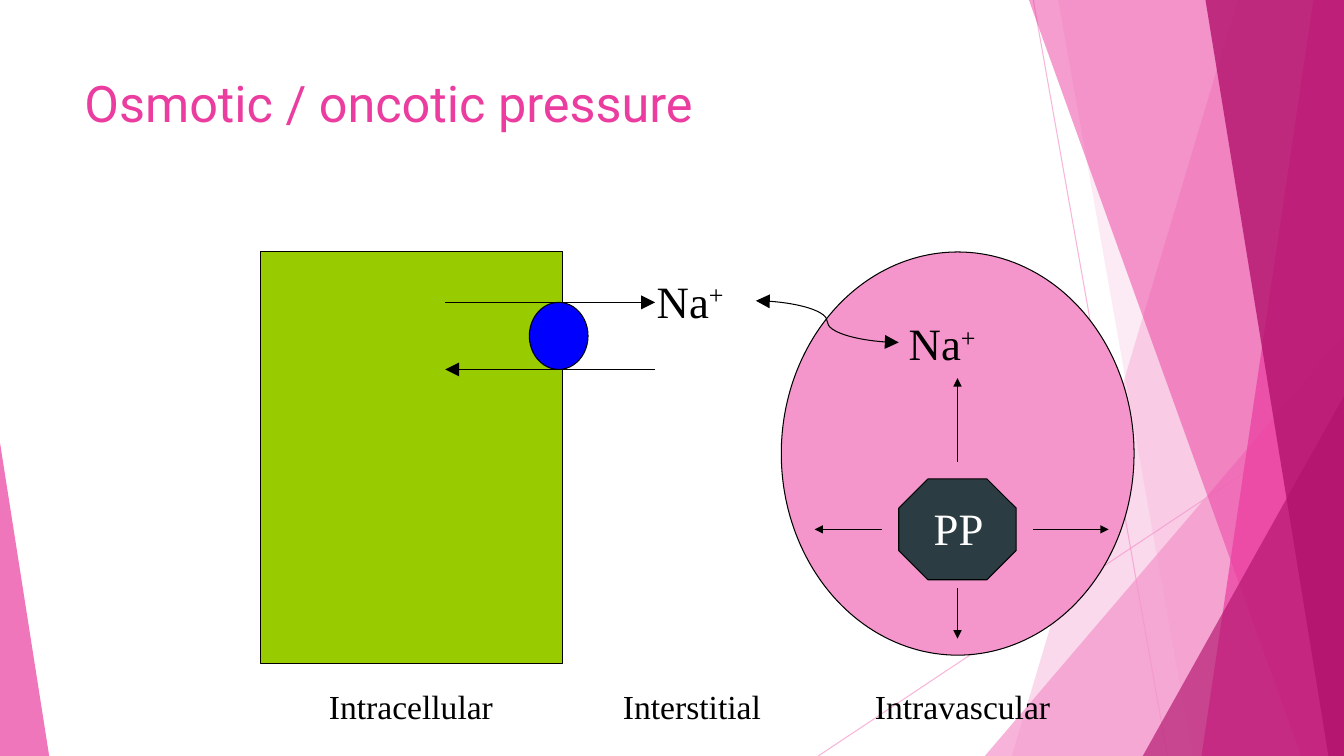
from dataclasses import dataclass

from lxml.etree import SubElement
from pptx import Presentation
from pptx.dml.color import RGBColor
from pptx.enum.shapes import MSO_CONNECTOR, MSO_SHAPE
from pptx.oxml.ns import qn
from pptx.util import Cm, Pt

WIDTH, HEIGHT = 33.87, 19.05


@dataclass(frozen=True)
class Theme:
    pale_pink: str = "F496CB"
    pink: str = "EB3D9F"
    magenta: str = "B2136D"
    black: str = "000000"
    white: str = "FFFFFF"
    cell_green: str = "99CC00"
    pump_blue: str = "0000FF"
    protein_slate: str = "2C3C43"
    title_font: str = "Roboto"
    body_font: str = "Times New Roman"
    title_size: int = 36
    symbol_size: int = 32
    label_size: int = 24
    line_width: float = 0.75


class SlideBuilder:
    def __init__(self, slide, theme):
        self.slide = slide
        self.theme = theme

    def paint(self, fill_format, color, opacity=100):
        fill_format.solid()
        fill_format.fore_color.rgb = RGBColor.from_string(color)
        if opacity < 100:
            color_element = fill_format._xPr.find(qn("a:solidFill"))[0]
            SubElement(color_element, qn("a:alpha"), val=str(opacity * 1000))

    def finish(self, shape, color, opacity, outlined):
        shape.shadow.inherit = False
        self.paint(shape.fill, color, opacity)
        if outlined:
            self.paint(shape.line.fill, self.theme.black)
            shape.line.width = Pt(self.theme.line_width)
        else:
            shape.line.fill.background()

    def shape(self, kind, box, color, opacity=100, outlined=True, adjustment=None):
        shape = self.slide.shapes.add_shape(kind, *map(Cm, box))
        if adjustment is not None:
            shape.adjustments[0] = adjustment
        self.finish(shape, color, opacity, outlined)

    def band(self, top_x, bottom_x, color, opacity):
        """Fill the slide from a slanted left edge to the right border."""
        corners = [(WIDTH, 0), (WIDTH, HEIGHT), (bottom_x, HEIGHT)]
        builder = self.slide.shapes.build_freeform(Cm(top_x), Cm(0), scale=1.0)
        builder.add_line_segments([(Cm(x), Cm(y)) for x, y in corners], close=True)
        self.finish(builder.convert_to_shape(), color, opacity, False)

    def corner(self, left, top, width, apex, color, opacity):
        """Stand a right triangle on the bottom edge; apex 0 is left, 1 is right."""
        box = (left, top, width, HEIGHT - top)
        self.shape(MSO_SHAPE.ISOSCELES_TRIANGLE, box, color, opacity, False, apex)

    def line(self, start, end, color=None, opacity=100, arrow_size=None,
             both_ends=False, kind=MSO_CONNECTOR.STRAIGHT):
        connector = self.slide.shapes.add_connector(kind, *map(Cm, start + end))
        self.paint(connector.line.fill, color or self.theme.black, opacity)
        connector.line.width = Pt(self.theme.line_width)
        line_element = connector.line._get_or_add_ln()
        ends = ["a:headEnd"] * both_ends + ["a:tailEnd"] * bool(arrow_size)
        for name in ends:
            SubElement(line_element, qn(name), type="triangle",
                       w=arrow_size, len=arrow_size)
        SubElement(connector._element.spPr, qn("a:effectLst"))

    def text(self, box, words, size, color=None, font=None, superscript=None):
        frame = self.slide.shapes.add_textbox(*map(Cm, box)).text_frame
        frame.word_wrap = True
        paragraph = frame.paragraphs[0]
        for content in filter(None, (words, superscript)):
            run = paragraph.add_run()
            run.text = content
            run.font.name = font or self.theme.body_font
            run.font.size = Pt(size)
            run.font.color.rgb = RGBColor.from_string(color or self.theme.black)
            if content == superscript:
                run._r.get_or_add_rPr().set("baseline", "30000")


def draw_backdrop(builder):
    theme = builder.theme
    builder.line((26.04, 0), (29.42, HEIGHT), theme.pale_pink, 70)
    builder.line((WIDTH, 10.24), (20.62, HEIGHT), theme.pale_pink, 70)
    builder.band(31.19, 25.5, theme.pale_pink, 36)
    builder.band(26.67, 30.05, theme.pale_pink, 20)
    builder.corner(24.82, 8.46, 9.05, 1, theme.pale_pink, 72)
    builder.band(25.93, 32.79, theme.pink, 50)
    builder.band(33.1, 30.28, theme.pink, 70)
    builder.band(30.38, 33.48, theme.magenta, 80)
    builder.corner(28.8, 9.98, 5.07, 1, theme.magenta, 66)
    builder.corner(0, 11.15, 1.24, 0, theme.pink, 70)


def draw_compartments(builder):
    theme = builder.theme
    builder.shape(MSO_SHAPE.RECTANGLE, (6.56, 6.35, 7.62, 10.36), theme.cell_green)
    builder.shape(MSO_SHAPE.OVAL, (19.69, 6.35, 8.89, 10.16), theme.pale_pink)
    labels = {"Intracellular": 8.04, "Interstitial": 15.45, "Intravascular": 21.8}
    for label, left in labels.items():
        builder.text((left, 17.15, 5.08, 1.27), label, theme.label_size)


def draw_sodium_exchange(builder):
    theme = builder.theme
    inside, outside, pump_top, pump_bottom = 11.22, 16.51, 7.62, 9.31
    builder.shape(MSO_SHAPE.OVAL, (13.34, pump_top, 1.48, pump_bottom - pump_top),
                  theme.pump_blue)
    builder.line((inside, pump_top), (outside, pump_top), arrow_size="lg")
    builder.line((outside, pump_bottom), (inside, pump_bottom), arrow_size="lg")
    for left, top in ((16.3, 6.77), (22.65, 7.83)):
        builder.text((left, top, 2.75, 1.6), "Na", theme.symbol_size, superscript="+")
    builder.line((19.05, 7.58), (22.65, 8.63), arrow_size="lg", both_ends=True,
                 kind=MSO_CONNECTOR.CURVE)


def draw_plasma_protein(builder):
    theme = builder.theme
    center_x, center_y = 24.13, 13.34
    builder.shape(MSO_SHAPE.OCTAGON, (22.65, 12.07, 2.96, 2.54),
                  theme.protein_slate, adjustment=0.29)
    builder.text((23.28, 12.49, 1.9, 1.6), "PP", theme.symbol_size, theme.white)
    for start_x, end_x in ((26.04, 27.94), (22.23, 20.53)):
        builder.line((start_x, center_y), (end_x, center_y), arrow_size="med")
    for start_y, end_y in ((14.82, 16.09), (11.64, 9.53)):
        builder.line((center_x, start_y), (center_x, end_y), arrow_size="med")


def main():
    presentation = Presentation()
    presentation.slide_width = Cm(WIDTH)
    presentation.slide_height = Cm(HEIGHT)
    slide = presentation.slides.add_slide(presentation.slide_layouts[6])
    theme = Theme()
    builder = SlideBuilder(slide, theme)
    draw_backdrop(builder)
    builder.text((1.88, 1.7, 23.88, 3.66), "Osmotic / oncotic pressure",
                 theme.title_size, theme.pink, theme.title_font)
    draw_compartments(builder)
    draw_sodium_exchange(builder)
    draw_plasma_protein(builder)
    presentation.save("out.pptx")


if __name__ == "__main__":
    main()
